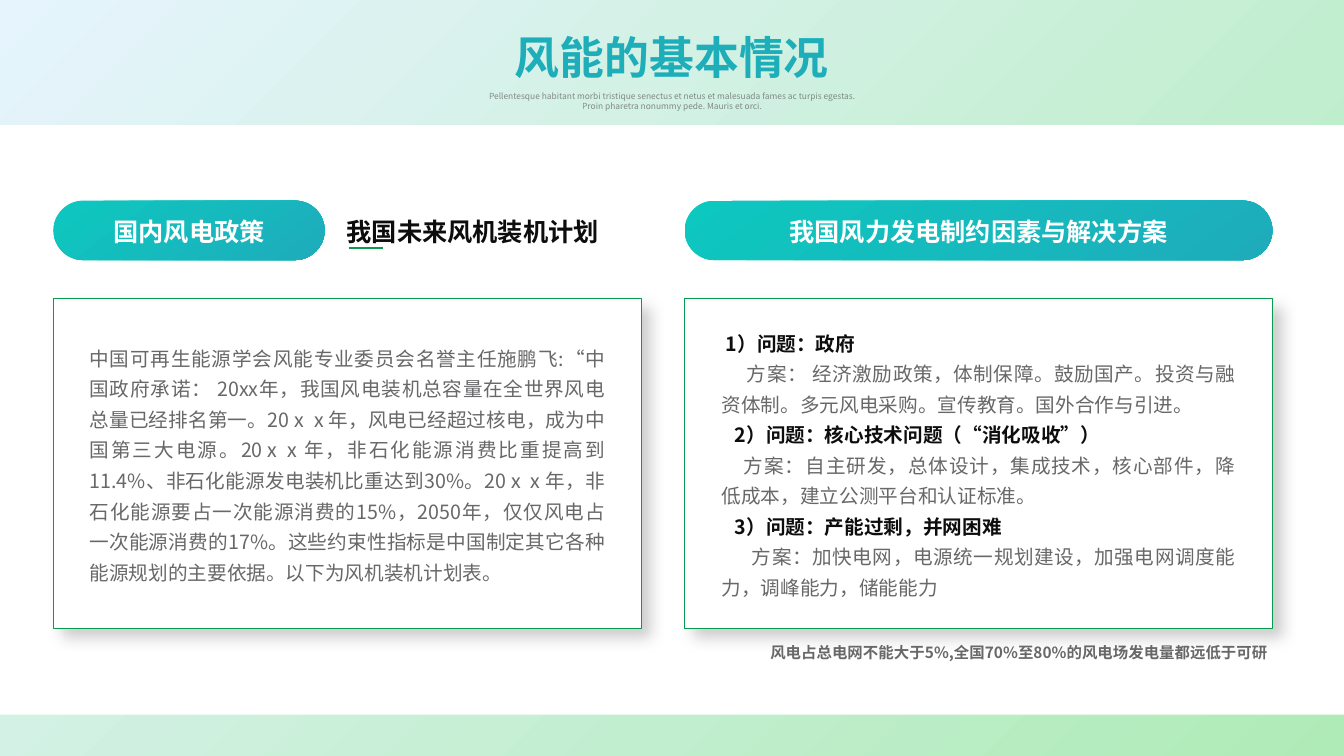
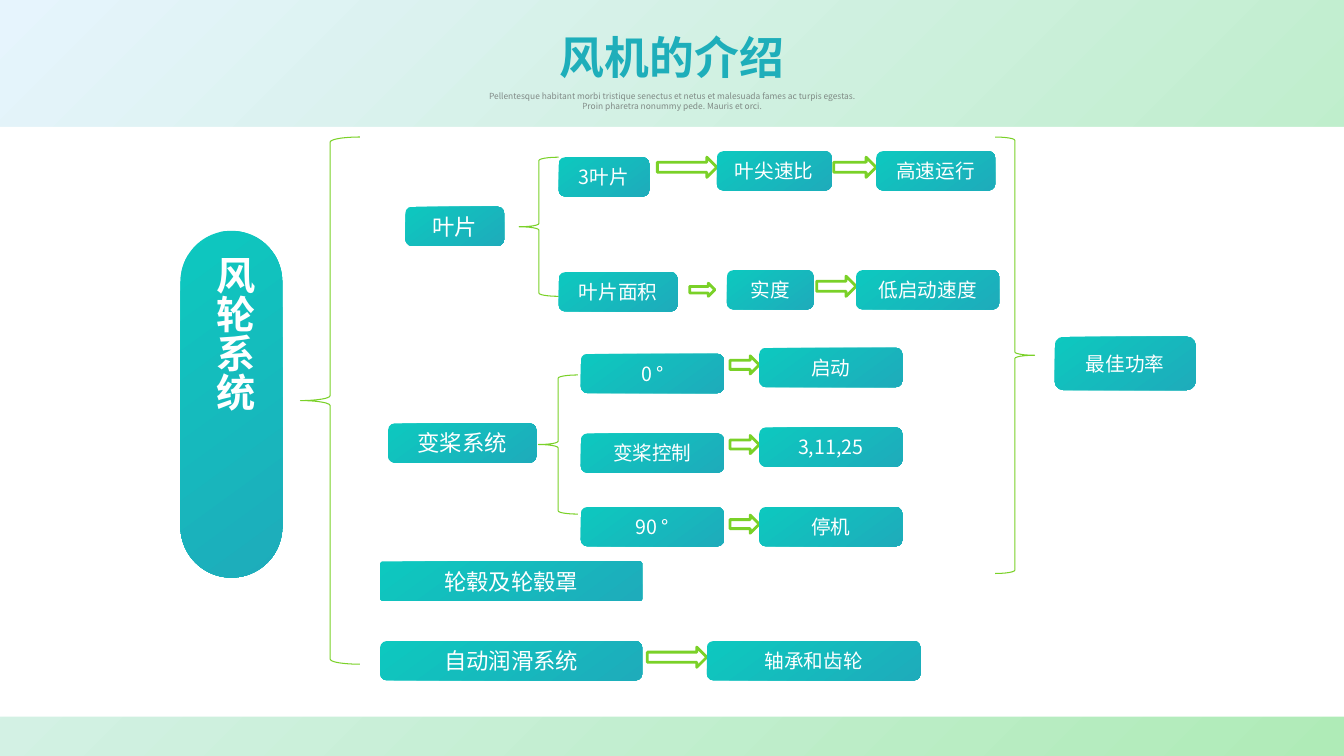
from lxml.etree import SubElement
from pptx import Presentation
from pptx.dml.color import RGBColor
from pptx.enum.shapes import MSO_CONNECTOR, MSO_SHAPE
from pptx.enum.text import MSO_ANCHOR, MSO_AUTO_SIZE, PP_ALIGN
from pptx.oxml.ns import qn
from pptx.util import Pt

PX = 9144  # 100 px to the inch
SLIDE_W, SLIDE_H = 1333, 750
TITLE_FONT, BODY_FONT = "Noto Sans CJK JP", "Noto Sans CJK SC"
WHITE, INK, GREY, PALE_GREY = "FFFFFF", "0D0D0D", "686769", "595959"
GREEN, LIME = "079B51", "7AD128"
TEAL, BLUE, TITLE_BLUE = "0DC8BF", "1EACBB", "1EAEBA"
SKY, MINT = "E6F4FD", "AFEBB7"
SUBTITLE = ("Pellentesque habitant morbi tristique senectus et netus et malesuada "
            "fames ac turpis egestas. Proin pharetra nonummy pede. Mauris et orci.")
NODE_H = 39


def px(*lengths):
    return [length * PX for length in lengths]


def rgb(value):
    return RGBColor.from_string(value)


def set_gradient(fill, start, end, angle, end_position=1.0):
    """Fill with two colours; the angle runs clockwise."""
    fill.gradient()
    fill.gradient_angle = 360 - angle
    first, last = fill.gradient_stops
    first.color.rgb, last.color.rgb = rgb(start), rgb(end)
    first.position, last.position = 0, end_position


def format_text(paragraph, size, color=None, bold=False, font=BODY_FONT,
                align=PP_ALIGN.CENTER, spacing=None):
    paragraph.alignment = align
    if spacing:
        paragraph.line_spacing = spacing
    for run in paragraph.runs:
        run.font.size, run.font.bold, run.font.name = Pt(size), bold, font
        if color:
            run.font.color.rgb = rgb(color)
        # The same typeface for Chinese characters
        latin = run._r.rPr.find(qn("a:latin"))
        latin.addnext(SubElement(run._r.rPr, qn("a:ea"), typeface=font))


def add_box(slide, kind, at, line=None, width=1):
    """Add an unfilled preset shape without a shadow."""
    box = slide.shapes.add_shape(kind, *px(*at))
    box.shadow.inherit = False
    box.fill.background()
    if line:
        box.line.color.rgb = rgb(line)
        box.line.width = Pt(width)
    else:
        box.line.fill.background()
    return box


def add_text(slide, at, text, size, color, **style):
    frame = slide.shapes.add_textbox(*px(*at)).text_frame
    frame.word_wrap = True
    frame.text = text
    for paragraph in frame.paragraphs:
        format_text(paragraph, size, color, **style)
    return frame


def add_node(slide, at, text, size=14, corner=None, **style):
    """Add a rounded teal box with white text."""
    node = add_box(slide, MSO_SHAPE.ROUNDED_RECTANGLE, at)
    set_gradient(node.fill, TEAL, BLUE, 54)
    if corner is not None:
        node.adjustments[0] = corner
    frame = node.text_frame
    frame.vertical_anchor = MSO_ANCHOR.MIDDLE
    frame.text = text
    format_text(frame.paragraphs[0], size, WHITE, **style)
    return node


def add_pill(slide, at, text):
    add_node(slide, at, text, 18, 0.5, bold=True, spacing=1.1)


def add_card(slide, at):
    card = add_box(slide, MSO_SHAPE.RECTANGLE, at, GREEN, 0.5)
    card.fill.solid()
    card.fill.fore_color.rgb = rgb(WHITE)
    effects = card.element.spPr.find(qn("a:effectLst"))
    shadow = SubElement(effects, qn("a:outerShdw"), blurRad=str(Pt(11)),
                        dist=str(Pt(9)), dir="2700000", algn="tl", rotWithShape="0")
    shade = SubElement(shadow, qn("a:srgbClr"), val="000000")
    SubElement(shade, qn("a:alpha"), val="20000")


def add_rule(slide, x1, x2, y):
    rule = slide.shapes.add_connector(MSO_CONNECTOR.STRAIGHT, *px(x1, y, x2, y))
    rule.line.color.rgb = rgb(GREEN)
    rule.line.width = Pt(1.5)
    SubElement(rule.element.spPr, qn("a:effectLst"))


def add_arrow(slide, *at):
    add_box(slide, MSO_SHAPE.RIGHT_ARROW, at, LIME, 2)


def add_brace(slide, at, kind=MSO_SHAPE.LEFT_BRACE):
    add_box(slide, kind, at, LIME, 0.75)


def add_themed_slide(prs, title_text, panel_top):
    """Add a slide with the gradient bands, white panel, title and subtitle."""
    slide = prs.slides.add_slide(prs.slide_layouts[5])

    # Radial gradient that starts in the top left corner
    backdrop = add_box(slide, MSO_SHAPE.RECTANGLE, (0, 0, SLIDE_W, SLIDE_H))
    set_gradient(backdrop.fill, SKY, MINT, 0)
    gradient = backdrop.element.spPr.find(qn("a:gradFill"))
    gradient.remove(gradient.find(qn("a:lin")))
    radial = SubElement(gradient, qn("a:path"))
    radial.set("path", "circle")
    SubElement(radial, qn("a:fillToRect"), r="100000", b="100000")

    panel = add_box(slide, MSO_SHAPE.RECTANGLE, (0, panel_top, SLIDE_W, 585))
    panel.fill.solid()
    panel.fill.fore_color.rgb = rgb(WHITE)

    # Title, raised above the backdrop
    title = slide.shapes.title
    title.element.getparent().append(title.element)
    width = 45 * len(title_text) + 20
    title.left, title.top, title.width, title.height = px(
        (SLIDE_W - width) // 2, 24, width, 64)
    frame = title.text_frame
    frame.text = title_text
    frame.word_wrap = False
    frame.auto_size = MSO_AUTO_SIZE.NONE
    frame.vertical_anchor = MSO_ANCHOR.MIDDLE
    heading = frame.paragraphs[0]
    format_text(heading, 32, bold=True, font=TITLE_FONT)
    set_gradient(heading.runs[0].font.fill, TITLE_BLUE, TEAL, 90, 0.95)

    subtitle = add_text(slide, (468, 85, 397, 30), SUBTITLE, 6, PALE_GREY)
    for tint in subtitle.paragraphs[0].runs[0]._r.iter(qn("a:srgbClr")):
        SubElement(tint, qn("a:alpha"), val="68000")
    return slide


def build_policy_slide(prs):
    slide = add_themed_slide(prs, "风能的基本情况", 124)
    left, right, column_w = 53, 679, 583
    justified = {"align": PP_ALIGN.JUSTIFY, "spacing": 1.3}

    # Column headings
    add_pill(slide, (left, 199, 269, 59), "国内风电政策")
    add_pill(slide, (right, 199, column_w, 59), "我国风力发电制约因素与解决方案")
    add_rule(slide, 346, 380, 246)
    add_text(slide, (334, 201, 329, 47), "我国未来风机装机计划", 18, INK,
             bold=True, align=PP_ALIGN.LEFT, spacing=1.3)
    for column in (left, right):
        add_card(slide, (column, 296, column_w, 327))

    # Policy statement
    add_text(slide, (79, 332, 531, 253),
             "中国可再生能源学会风能专业委员会名誉主任施鹏飞:“中国政府承诺： 20xx年，"
             "我国风电装机总容量在全世界风电总量已经排名第一。20ⅹⅹ年，风电已经超过核电，"
             "成为中国第三大电源。20ⅹⅹ年，非石化能源消费比重提高到11.4%、"
             "非石化能源发电装机比重达到30%。20ⅹⅹ年，非石化能源要占一次能源消费的15%，"
             "2050年，仅仅风电占一次能源消费的17%。这些约束性指标是中国制定其它各种能源规划的"
             "主要依据。以下为风机装机计划表。", 14, GREY, **justified)

    # Problems and their remedies, each with its first-line indent
    issue_lines = [
        (4, "1）问题：政府"),
        (25, "方案： 经济激励政策，体制保障。鼓励国产。投资与融资体制。多元风电采购。"
             "宣传教育。国外合作与引进。"),
        (13, "2）问题：核心技术问题（“消化吸收”）"),
        (22, "方案：自主研发，总体设计，集成技术，核心部件，降低成本，"
             "建立公测平台和认证标准。"),
        (13, "3）问题：产能过剩，并网困难"),
        (30, "方案：加快电网，电源统一规划建设，加强电网调度能力，调峰能力，储能能力"),
    ]
    frame = add_text(slide, (706, 317, 529, 284),
                     "\n".join(text for _, text in issue_lines), 14, GREY, **justified)
    for paragraph, (indent, _) in zip(frame.paragraphs, issue_lines):
        paragraph._p.get_or_add_pPr().set("indent", str(indent * PX))
    for problem in frame.paragraphs[::2]:
        problem.runs[0].font.bold = True
        problem.runs[0].font.color.rgb = rgb(INK)

    add_text(slide, (418, 628, 849, 32),
             "风电占总电网不能大于5%,全国70%至80%的风电场发电量都远低于可研",
             11, GREY, bold=True, align=PP_ALIGN.RIGHT, spacing=1.3)


def build_turbine_slide(prs):
    slide = add_themed_slide(prs, "风机的介绍", 126)

    # Root of the tree, with vertical text
    root = add_node(slide, (179, 229, 101, 344), "风轮系统", 28, 0.5,
                    bold=True, align=PP_ALIGN.LEFT, spacing=1.1)
    root.text_frame.vertical_anchor = MSO_ANCHOR.TOP
    root.text_frame._txBody.bodyPr.set("vert", "eaVert")

    # Braces
    for brace in ((298, 136, 59, 523), (515, 156, 39, 138), (534, 372, 39, 138)):
        add_brace(slide, brace)
    add_brace(slide, (987, 136, 39, 433), MSO_SHAPE.RIGHT_BRACE)

    # Subsystems
    for text, x, y, width, corner in (
            ("叶片", 402, 205, 98, None), ("变桨系统", 385, 420, 147, None),
            ("轮毂及轮毂罩", 377, 557, 260, 0.06), ("自动润滑系统", 377, 636, 260, None)):
        add_node(slide, (x, y, width, NODE_H), text, 16, corner)

    # Arrows fill the gaps between the boxes of a chain
    for x, y, width, height in (
            (652, 156, 59, 20), (827, 156, 42, 20), (684, 281, 25, 13),
            (810, 274, 39, 20), (642, 642, 59, 20)):
        add_arrow(slide, x, y, width, height)

    # Blade and lubrication chains
    for text, x, y, width in (
            ("3叶片", 554, 156, 90), ("叶尖速比", 711, 150, 114), ("高速运行", 869, 150, 118),
            ("叶片面积", 554, 270, 118), ("实度", 721, 268, 86), ("低启动速度", 849, 268, 142),
            ("轴承和齿轮", 701, 636, 212)):
        add_node(slide, (x, y, width, NODE_H), text)

    # Pitch angles and what they lead to
    pitch_rows = (("0 °", 351, "启动"), ("变桨控制", 430, "3,11,25"), ("90 °", 503, "停机"))
    for row, (angle, angle_y, outcome) in enumerate(pitch_rows):
        outcome_y = 345 + 79 * row
        add_node(slide, (576, angle_y, 142, NODE_H), angle)
        add_arrow(slide, 724, outcome_y + 8, 29, 18)
        add_node(slide, (753, outcome_y, 142, NODE_H), outcome)

    # Result
    add_node(slide, (1046, 334, 140, 53), "最佳功率")


def main():
    prs = Presentation()
    prs.slide_width, prs.slide_height = px(SLIDE_W, SLIDE_H)
    build_policy_slide(prs)
    build_turbine_slide(prs)
    prs.save("out.pptx")


if __name__ == "__main__":
    main()
